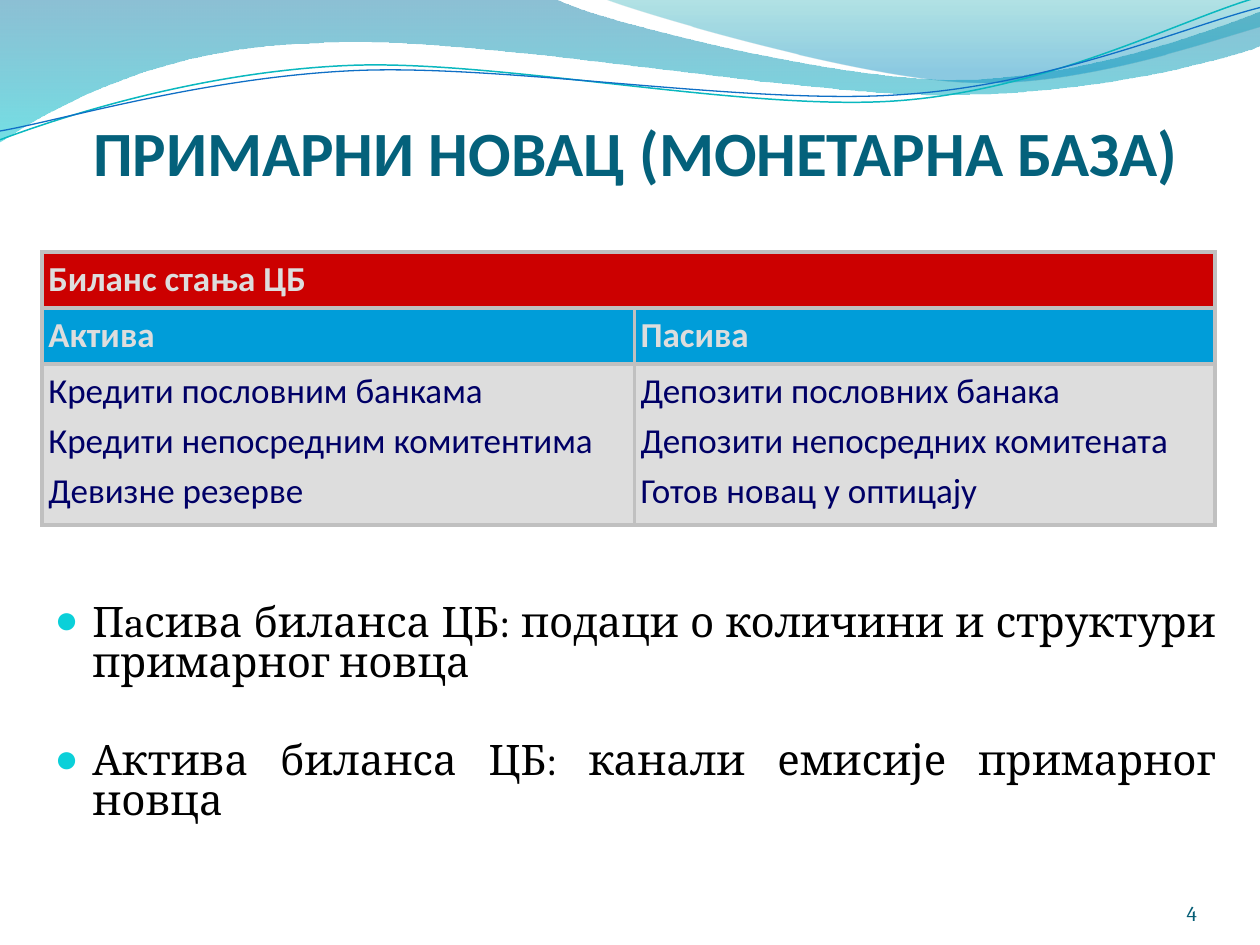
from lxml.etree import SubElement
from pptx import Presentation
from pptx.dml.color import RGBColor
from pptx.enum.text import MSO_ANCHOR, MSO_AUTO_SIZE, PP_ALIGN
from pptx.oxml import parse_xml
from pptx.oxml.ns import nsdecls, qn
from pptx.util import Inches, Pt

TEAL = RGBColor(0x04, 0x61, 0x7B)
NUMBER_TEAL = RGBColor(0x04, 0x5D, 0x75)
BULLET_CYAN = RGBColor(0x0B, 0xD0, 0xD9)
BLACK = RGBColor(0, 0, 0)
NAVY = RGBColor(0, 0, 0x66)
RED = RGBColor(0xCC, 0, 0)
BLUE = RGBColor(0, 0x9D, 0xD9)
PALE = RGBColor(0xDD, 0xDD, 0xDD)
BORDER = RGBColor(0xC0, 0xC0, 0xC0)

TITLE = "ПРИМАРНИ НОВАЦ (МОНЕТАРНА БАЗА)"
BULLETS = [
    "Пaсива биланса ЦБ: подаци о количини и структури примарног новца",
    "Актива биланса ЦБ: канали емисије примарног новца",
]
ROWS = [
    [["Биланс стања ЦБ"], []],
    [["Актива"], ["Пасива"]],
    [["Кредити пословним банкама", "Кредити непосредним комитентима", "Девизне резерве"],
     ["Депозити пословних банака", "Депозити непосредних комитената", "Готов новац у оптицају"]],
]
ROW_STYLES = [(RED, PALE, True), (BLUE, PALE, True), (PALE, NAVY, False)]
ROW_HEIGHTS = [4 / 9, 4 / 9, 23 / 18]
COL_WIDTHS = [4.7, 4.61]
LEFT = 1 / 3  # shared by the table and the list

# Outlines in inches: a pair is a straight step, six numbers are a cubic curve.
# Gradient stops: position, colour, opacity in percent.
BANDS = [
    ([(0, 0), (4.4, -0.01), (4.76, 0.17, 6.64, 0.63, 7.58, 0.63),
      (8.53, 0.63, 9.58, 0.26, 10, 0.09), (10.01, 0.36),
      (9.83, 0.44, 8.7, 0.76, 7.46, 0.75), (6.22, 0.75, 3.82, 0.28, 2.57, 0.34),
      (1.29, 0.36, 0.46, 0.83, -0.01, 1.13), (0, 0)],
     [(0, RGBColor(0, 0x74, 0xA1), 45), (1, RGBColor(0, 0xC6, 0xCF), 55)]),
    ([(4.79, -0.01), (5.09, 0.11, 6.82, 0.62, 7.69, 0.65),
      (8.56, 0.69, 9.61, 0.32, 10, 0.21), (10, 0), (4.79, -0.01)],
     [(0, RGBColor(0, 0xA1, 0xA9), 30), (0.8, RGBColor(0, 0x8B, 0xBF), 45)]),
]
WAVES = [
    ([(0, 1.11), (0.48, 0.93, 1.58, 0.57, 2.77, 0.52),
      (3.95, 0.47, 5.93, 0.89, 7.13, 0.8), (8.33, 0.71, 9.38, 0.15, 9.98, -0.02)],
     RGBColor(0x0A, 0xB8, 0xBF), 0.85),
    ([(0, 1.04), (0.47, 0.96, 1.64, 0.61, 2.83, 0.56),
      (4.03, 0.51, 5.97, 0.84, 7.17, 0.75), (8.36, 0.67, 9.41, 0.21, 10, 0.06)],
     RGBColor(0x0F, 0x6F, 0xC6), 0.75),
]


def add_outline(s, outline, close):
    """Draw straight steps through all points, then join triples into curves."""
    points = [(Inches(step[k]), Inches(step[k + 1]))
              for step in outline for k in range(0, len(step), 2)]
    builder = s.shapes.build_freeform(*points[0])
    builder.add_line_segments(points[1:], close=close)
    sp = builder.convert_to_shape()
    sp.shadow.inherit = False
    lines = iter(list(sp.element.spPr.iter(qn("a:lnTo"))))
    for step in outline[1:]:
        line = next(lines)
        if len(step) == 6:
            curve = parse_xml(f'<a:cubicBezTo {nsdecls("a")}/>')
            line.addprevious(curve)
            for part in (line, next(lines), next(lines)):
                curve.append(part[0])
                part.getparent().remove(part)
    return sp


def add_band(s, outline, stops):
    sp = add_outline(s, outline, True)
    sp.line.fill.background()
    sp.fill.gradient()
    sp.fill.gradient_angle = 270
    for stop, (position, color, _) in zip(sp.fill.gradient_stops, stops):
        stop.position = position
        stop.color.rgb = color
    for clr, (_, _, opacity) in zip(sp.element.spPr.iter(qn("a:srgbClr")), stops):
        SubElement(clr, qn("a:alpha"), val=str(opacity * 1000))


def add_wave(s, outline, color, width):
    sp = add_outline(s, outline, False)
    sp.fill.background()
    sp.line.color.rgb = color
    sp.line.width = Pt(width)


def write(tf, lines, size, font, color, bold=False, align=PP_ALIGN.LEFT,
          before=0, spacing=None, insets=(0.1, 0.05, 0.1, 0.05)):
    """Fill a text frame or table cell frame, one paragraph a line."""
    tf.word_wrap = True
    tf.margin_left, tf.margin_top, tf.margin_right, tf.margin_bottom = map(Inches, insets)
    for i, text in enumerate(lines):
        p = tf.paragraphs[0] if i == 0 else tf.add_paragraph()
        p.alignment = align
        p.space_before = Pt(before)
        if spacing:
            p.line_spacing = spacing
        r = p.add_run()
        r.text = text
        r.font.size, r.font.name, r.font.bold = Pt(size), font, bold
        r.font.color.rgb = color


def place(sp, left, top, width, height):
    sp.left, sp.top, sp.width, sp.height = map(Inches, (left, top, width, height))
    sp.element.getparent().append(sp.element)  # bring to front


def set_bullet(p):
    pPr = p._p.get_or_add_pPr()
    pPr.set("marL", str(Inches(0.3)))
    pPr.set("indent", str(Inches(-0.3)))
    SubElement(SubElement(pPr, qn("a:buClr")), qn("a:srgbClr"), val=str(BULLET_CYAN))
    SubElement(pPr, qn("a:buSzPct"), val="95000")
    SubElement(pPr, qn("a:buChar"), char="●")


def set_borders(cell):
    tcPr = cell._tc.get_or_add_tcPr()
    for i, side in enumerate(("lnL", "lnR", "lnT", "lnB")):
        tcPr.insert(i, parse_xml(
            f'<a:{side} {nsdecls("a")} w="{Pt(2.25)}"><a:solidFill>'
            f'<a:srgbClr val="{BORDER}"/></a:solidFill></a:{side}>'))


def add_balance(s):
    frame = s.shapes.add_table(len(ROWS), len(COL_WIDTHS), Inches(LEFT), Inches(2),
                               Inches(sum(COL_WIDTHS)), Inches(sum(ROW_HEIGHTS)))
    table = frame.table
    for column, width in zip(table.columns, COL_WIDTHS):
        column.width = Inches(width)
    for i, (row, (fill, color, bold)) in enumerate(zip(ROWS, ROW_STYLES)):
        table.rows[i].height = Inches(ROW_HEIGHTS[i])
        for j, lines in enumerate(row):
            cell = table.cell(i, j)
            cell.fill.solid()
            cell.fill.fore_color.rgb = fill
            set_borders(cell)
            cell.margin_left = cell.margin_right = Inches(0.05)
            cell.margin_top = cell.margin_bottom = Inches(0.05)
            write(cell.text_frame, lines, 20, "Calibri", color, bold, before=4,
                  insets=(0.05,) * 4)
    table.cell(0, 0).merge(table.cell(0, 1))


def main():
    prs = Presentation()
    prs.slide_width, prs.slide_height = Inches(10), Inches(7.5)
    s = prs.slides.add_slide(prs.slide_layouts[1])
    title, body = s.shapes.title, s.placeholders[1]

    for band in BANDS:
        add_band(s, *band)
    for wave in WAVES:
        add_wave(s, *wave)

    number = s.shapes.add_textbox(Inches(8.67), Inches(6.95), Inches(0.83), Inches(0.4))
    number.text_frame.vertical_anchor = MSO_ANCHOR.BOTTOM
    write(number.text_frame, ["4"], 12, "Cambria", NUMBER_TEAL,
          align=PP_ALIGN.RIGHT, insets=(0,) * 4)

    place(body, LEFT, 4.75, 9.42, 1.63)
    body.text_frame.auto_size = MSO_AUTO_SIZE.NONE
    write(body.text_frame, BULLETS, 24, "Cambria", BLACK,
          align=PP_ALIGN.JUSTIFY, before=4, spacing=0.8)
    for p in body.text_frame.paragraphs:
        set_bullet(p)
    body.text_frame.paragraphs[1].space_before = Pt(33)

    add_balance(s)

    place(title, 0.42, 0.25, 9.25, 1.25)
    title.text_frame.auto_size = MSO_AUTO_SIZE.NONE
    title.text_frame.vertical_anchor = MSO_ANCHOR.BOTTOM
    write(title.text_frame, [TITLE], 36, "Calibri", TEAL, True,
          align=PP_ALIGN.CENTER, insets=(0, 0.05, 0, 0))

    prs.save("out.pptx")


if __name__ == "__main__":
    main()
